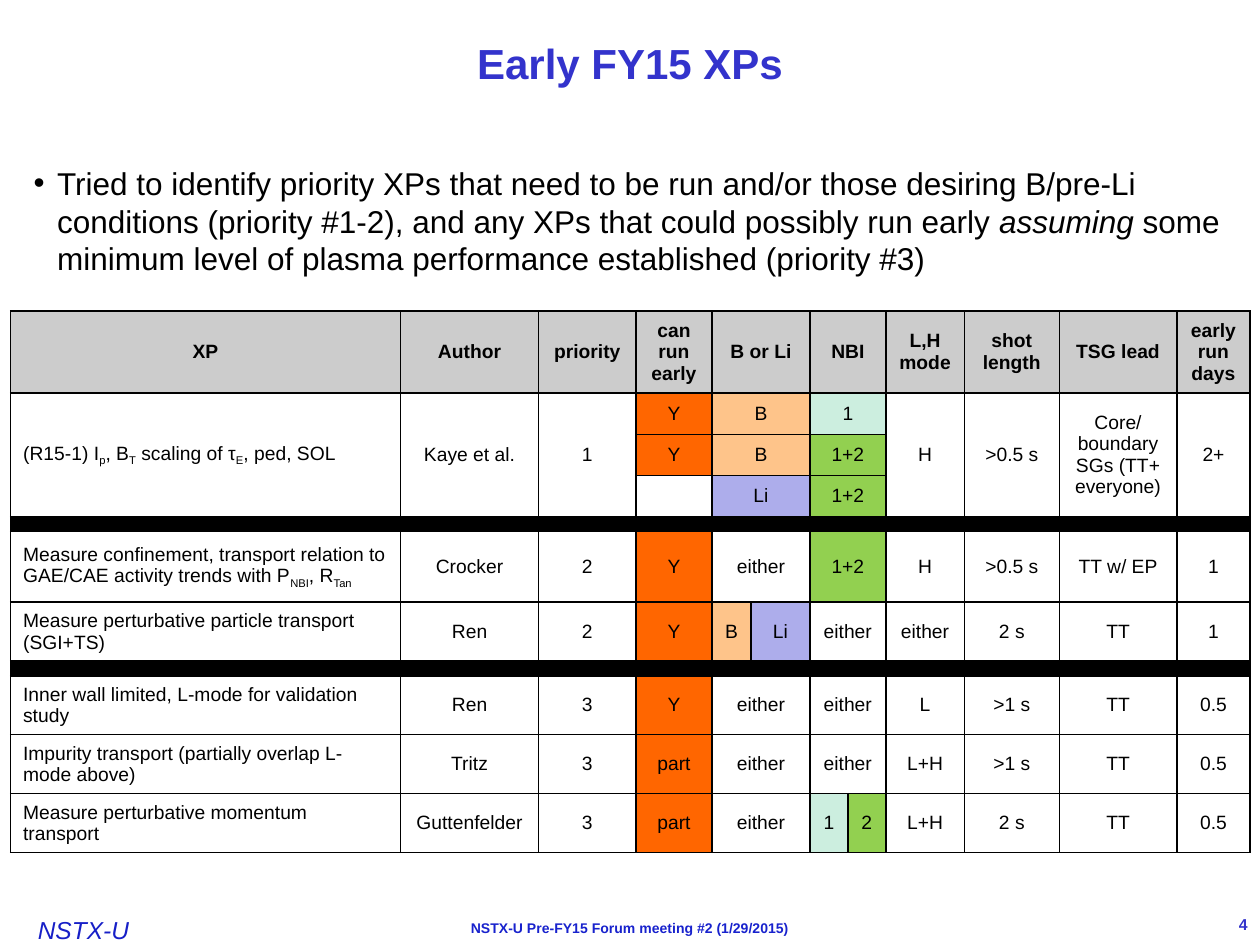
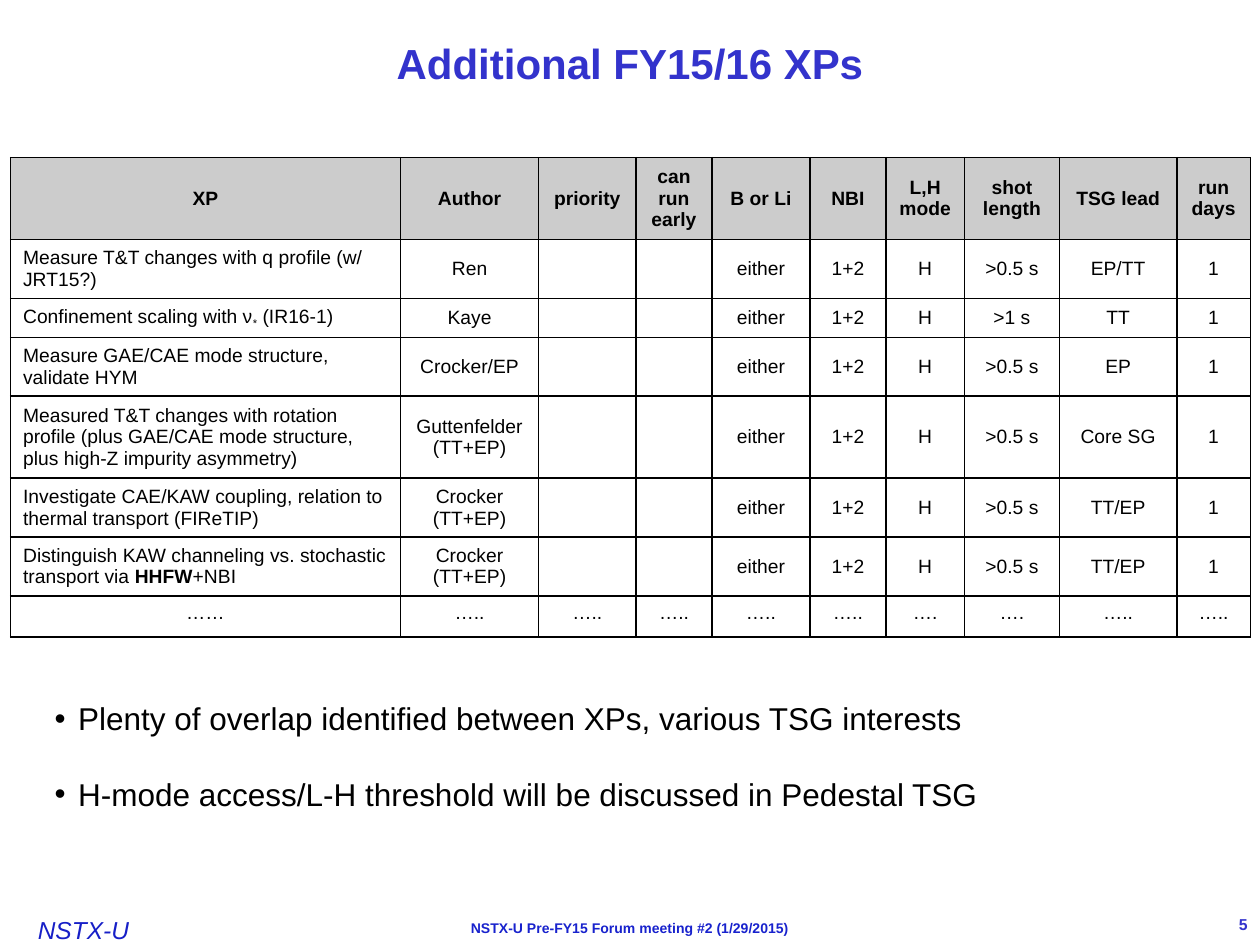
from lxml import etree
from pptx import Presentation
from pptx.dml.color import RGBColor
from pptx.enum.text import MSO_ANCHOR as Anchor, MSO_AUTO_SIZE as AutoSize, PP_ALIGN as Align
from pptx.oxml.ns import qn
from pptx.util import Pt

# Shared look
FONT = "Arial"
BLACK, GREY = "000000", "CCCCCC"
TITLE_BLUE, LOGO_BLUE, FOOTER_BLUE = "3333CC", "171FC7", "1822CD"
ORANGE, PEACH, LILAC, MINT, GREEN = "FF6600", "FEC48A", "ADADEB", "CCEEDF", "92D050"

# Column widths; B/Li and NBI are each split in two on the first table
BORON, LITHIUM, NBI_1, NBI_2 = 22.3, 33.7, 21.7, 21.7
LEFT_COLUMNS, RIGHT_COLUMNS = [222.9, 78.9, 55.7, 43.4], [44.9, 54.3, 67.1, 42]
EARLY_COLUMNS = LEFT_COLUMNS + [BORON, LITHIUM, NBI_1, NBI_2] + RIGHT_COLUMNS
ADDITIONAL_COLUMNS = LEFT_COLUMNS + [BORON + LITHIUM, NBI_1 + NBI_2] + RIGHT_COLUMNS

# Table content: "<" joins the cell to its left, "^" to the one above.
# Between bars, "_" marks a subscript, "*" bold and "/" italic.
HEAD_LEFT = ["XP", "Author", "priority", "can run early"]
HEAD_RIGHT = ["L,H\nmode", "shot\nlength", "TSG lead"]
DIVIDER = [""] * 4 + ["", "<"] * 2 + [""] * 4
EARLY_ROWS = [
    (44.6, HEAD_LEFT + ["B or Li", "<", "NBI", "<"] + HEAD_RIGHT + ["early run days"]),
    (23.6, ["(R15-1) I|_p|, B|_T| scaling of τ|_E|, ped, SOL", "Kaye et al.", "1", "Y",
            "B", "<", "1", "<", "H", ">0.5 s", "Core/boundary SGs (TT+ everyone)", "2+"]),
    (23.6, ["^"] * 3 + ["Y", "B", "<", "1+2", "<"] + ["^"] * 4),
    (23.6, ["^"] * 3 + ["", "Li", "<", "1+2", "<"] + ["^"] * 4),
    (8, DIVIDER),
    (40.4, ["Measure confinement, transport relation to GAE/CAE activity trends with "
            "P|_NBI|, R|_Tan|", "Crocker", "2", "Y", "either", "<", "1+2", "<",
            "H", ">0.5 s", "TT w/ EP", "1"]),
    (32, ["Measure perturbative particle transport (SGI+TS)", "Ren", "2", "Y",
          "B", "Li", "either", "<", "either", "2 s", "TT", "1"]),
    (8, DIVIDER),
    (31.7, ["Inner wall limited, L-mode for validation study", "Ren", "3", "Y",
            "either", "<", "either", "<", "L", ">1 s", "TT", "0.5"]),
    (31.7, ["Impurity transport (partially overlap L-mode above)", "Tritz", "3", "part",
            "either", "<", "either", "<", "L+H", ">1 s", "TT", "0.5"]),
    (31.7, ["Measure perturbative momentum transport", "Guttenfelder", "3", "part",
            "either", "<", "1", "2", "L+H", "2 s", "TT", "0.5"]),
]
EARLY_FILLS = {
    3: {"Y": ORANGE, "part": ORANGE},
    4: {"B": PEACH, "Li": LILAC},
    5: {"Li": LILAC},
    6: {"1": MINT, "1+2": GREEN},
    7: {"2": GREEN},
}


def additional_row(height, xp, author, lead, shot=">0.5 s"):
    return height, [xp, author, "", "", "either", "1+2", "H", shot, lead, "1"]


ADDITIONAL_ROWS = [
    (45, HEAD_LEFT + ["B or Li", "NBI"] + HEAD_RIGHT + ["run days"]),
    additional_row(32, "Measure T&T changes with q profile (w/ JRT15?)", "Ren", "EP/TT"),
    additional_row(21.6, "Confinement scaling with ν|_*| (IR16-1)", "Kaye", "TT", ">1 s"),
    additional_row(32, "Measure GAE/CAE mode structure, validate HYM", "Crocker/EP", "EP"),
    additional_row(43.9, "Measured T&T changes with rotation profile (plus GAE/CAE mode "
                   "structure, plus high-Z impurity asymmetry)",
                   "Guttenfelder (TT+EP)", "Core SG"),
    additional_row(31.7, "Investigate CAE/KAW coupling, relation to thermal transport (FIReTIP)",
                   "Crocker (TT+EP)", "TT/EP"),
    additional_row(31.7, "Distinguish KAW channeling vs. stochastic transport via |*HHFW|+NBI",
                   "Crocker (TT+EP)", "TT/EP"),
    (23.4, ["……"] + ["….."] * 5 + ["…."] * 2 + ["….."] * 2),
]


def rgb(value):
    return RGBColor.from_string(value)


def style(paragraph, size, color, bold=False, italic=False, align=Align.LEFT):
    paragraph.alignment = align
    font = paragraph.font
    font.name, font.size, font.bold, font.italic = FONT, Pt(size), bold, italic
    font.color.rgb = rgb(color)


def add_runs(paragraph, text):
    for index, piece in enumerate(text.split("|")):
        run = paragraph.add_run()
        run.text = piece
        if index % 2:
            mark, run.text = piece[0], piece[1:]
            if mark == "_":
                run._r.get_or_add_rPr().set("baseline", "-25000")
            elif mark == "*":
                run.font.bold = True
            else:
                run.font.italic = True


def place(shape, box):
    shape.left, shape.top, shape.width, shape.height = (Pt(v) for v in box)


def add_title(slide, text):
    title = slide.shapes.title
    place(title, (0, 0, 720, 72))
    title.text_frame.text = text
    title.text_frame.vertical_anchor = Anchor.MIDDLE
    style(title.text_frame.paragraphs[0], 24, TITLE_BLUE, bold=True, align=Align.CENTER)


def add_bullets(slide, box, items):
    body = slide.placeholders[1]
    place(body, box)
    frame = body.text_frame
    frame.auto_size = AutoSize.NONE
    frame.vertical_anchor = Anchor.TOP
    for index, item in enumerate(items):
        paragraph = frame.add_paragraph() if index else frame.paragraphs[0]
        properties = paragraph._p.get_or_add_pPr()
        properties.set("marL", str(Pt(13.5)))
        properties.set("indent", str(-Pt(13.5)))
        etree.SubElement(properties, qn("a:buChar"), char="•")
        paragraph.space_before = Pt(21.7 if index else 0)
        add_runs(paragraph, item)
        style(paragraph, 18, BLACK)


def add_label(slide, box, text, size, color, inset=True, **look):
    label = slide.shapes.add_textbox(*(Pt(v) for v in box))
    frame = label.text_frame
    frame.word_wrap = True
    if not inset:
        frame.margin_left = frame.margin_right = frame.margin_top = frame.margin_bottom = 0
    frame.text = text
    style(frame.paragraphs[0], size, color, **look)
    return frame


def add_footer(slide, number):
    add_label(slide, (21.6, 522.7, 62.6, 14.4), "NSTX-U", 14, LOGO_BLUE,
              inset=False, italic=True)
    add_label(slide, (144, 522, 432, 17.3), "NSTX-U Pre-FY15 Forum meeting #2 (1/29/2015)",
              8, FOOTER_BLUE, bold=True, align=Align.CENTER)
    page = add_label(slide, (660, 522, 60, 12.2), str(number), 9, TITLE_BLUE,
                     bold=True, align=Align.RIGHT)
    page.vertical_anchor = Anchor.MIDDLE


def add_borders(cell):
    properties = cell._tc.get_or_add_tcPr()
    for side in ("lnL", "lnR", "lnT", "lnB"):
        line = etree.SubElement(properties, qn(f"a:{side}"), w=str(Pt(1)))
        solid = etree.SubElement(line, qn("a:solidFill"))
        etree.SubElement(solid, qn("a:srgbClr"), val=BLACK)


def fill_cell(cell, text, fill, header, align):
    add_borders(cell)
    if fill:
        cell.fill.solid()
        cell.fill.fore_color.rgb = rgb(fill)
    else:
        cell.fill.background()
    if text in ("", "<", "^"):
        # A tiny end mark keeps empty cells from stretching their row
        etree.SubElement(cell.text_frame.paragraphs[0]._p, qn("a:endParaRPr"), sz="100")
        return
    cell.vertical_anchor = Anchor.TOP if text.startswith("…") else Anchor.MIDDLE
    for index, line in enumerate(text.split("\n")):
        frame = cell.text_frame
        paragraph = frame.add_paragraph() if index else frame.paragraphs[0]
        add_runs(paragraph, line)
        style(paragraph, 11, BLACK, bold=header, align=align)


def merge_spans(table, rows):
    for r, (_, texts) in enumerate(rows):
        for c, text in enumerate(texts):
            if text in ("<", "^"):
                continue
            right, bottom = c, r
            while right + 1 < len(texts) and texts[right + 1] == "<":
                right += 1
            while bottom + 1 < len(rows) and rows[bottom + 1][1][c] == "^":
                bottom += 1
            if (right, bottom) != (c, r):
                table.cell(r, c).merge(table.cell(bottom, right))


def add_xp_table(slide, left, top, columns, rows, fills):
    height = sum(row_height for row_height, _ in rows)
    table = slide.shapes.add_table(len(rows), len(columns), Pt(left), Pt(top),
                                   Pt(sum(columns)), Pt(height)).table
    table.first_row = table.horz_banding = False
    for column, width in zip(table.columns, columns):
        column.width = Pt(width)
    for r, (row_height, texts) in enumerate(rows):
        table.rows[r].height = Pt(row_height)
        for c, text in enumerate(texts):
            if r == 0:
                fill = GREY
            elif texts is DIVIDER:
                fill = BLACK
            else:
                fill = fills.get(c, {}).get(text)
            is_name = r > 0 and c == 0 and not text.startswith("…")
            fill_cell(table.cell(r, c), text, fill, r == 0,
                      Align.LEFT if is_name else Align.CENTER)
    merge_spans(table, rows)


def add_xp_slide(deck, number, title, table_top, columns, rows, fills, bullet_box, bullets):
    slide = deck.slides.add_slide(deck.slide_layouts[1])
    add_footer(slide, number)
    add_title(slide, title)
    add_xp_table(slide, 6, table_top, columns, rows, fills)
    add_bullets(slide, bullet_box, bullets)


def main():
    deck = Presentation()
    deck.slide_width, deck.slide_height = Pt(720), Pt(540)
    add_xp_slide(deck, 4, "Early FY15 XPs", 177.7, EARLY_COLUMNS, EARLY_ROWS, EARLY_FILLS,
                 (12, 90, 696, 72.7),
                 ["Tried to identify priority XPs that need to be run and/or those desiring "
                  "B/pre-Li conditions (priority #1-2), and any XPs that could possibly run "
                  "early |/assuming |some minimum level of plasma performance established "
                  "(priority #3)"])
    add_xp_slide(deck, 5, "Additional FY15/16 XPs", 90, ADDITIONAL_COLUMNS, ADDITIONAL_ROWS, {},
                 (24, 396, 684, 72.7),
                 ["Plenty of overlap identified between XPs, various TSG interests",
                  "H-mode access/L-H threshold will be discussed in Pedestal TSG"])
    deck.save("out.pptx")


if __name__ == "__main__":
    main()
